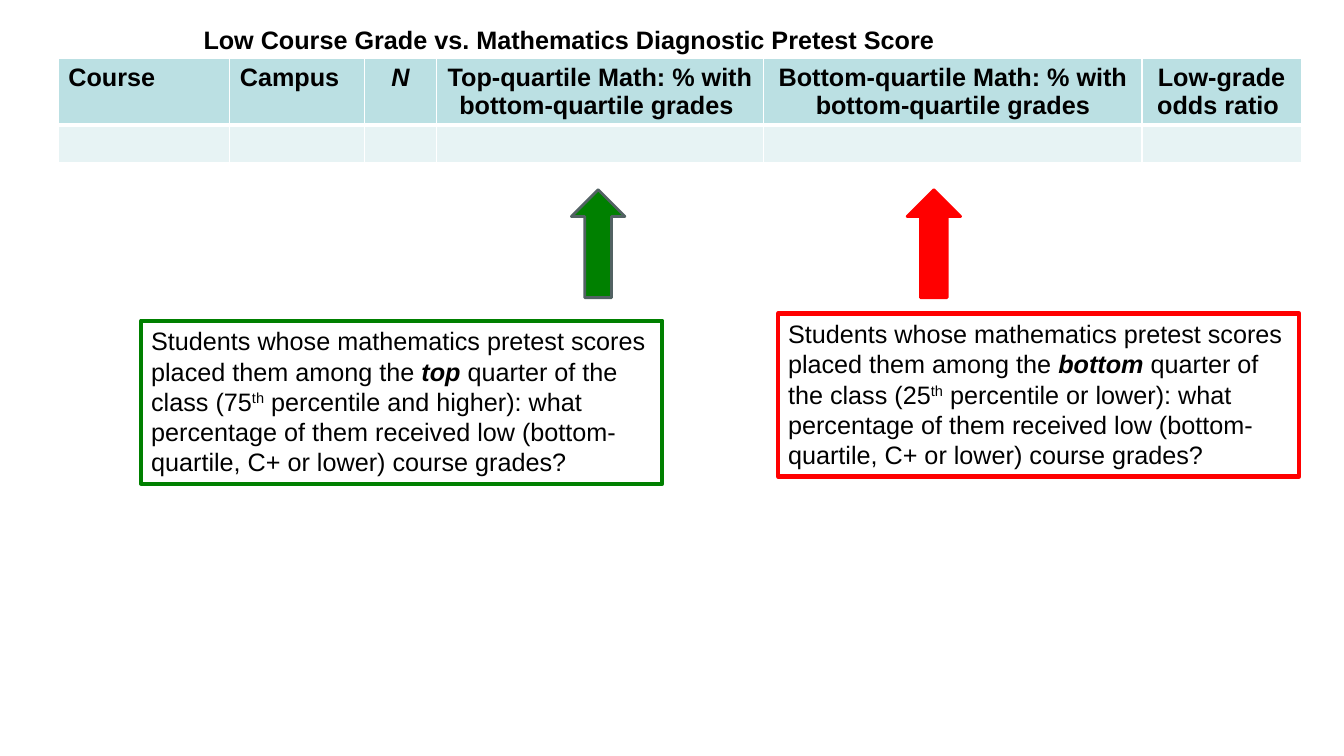
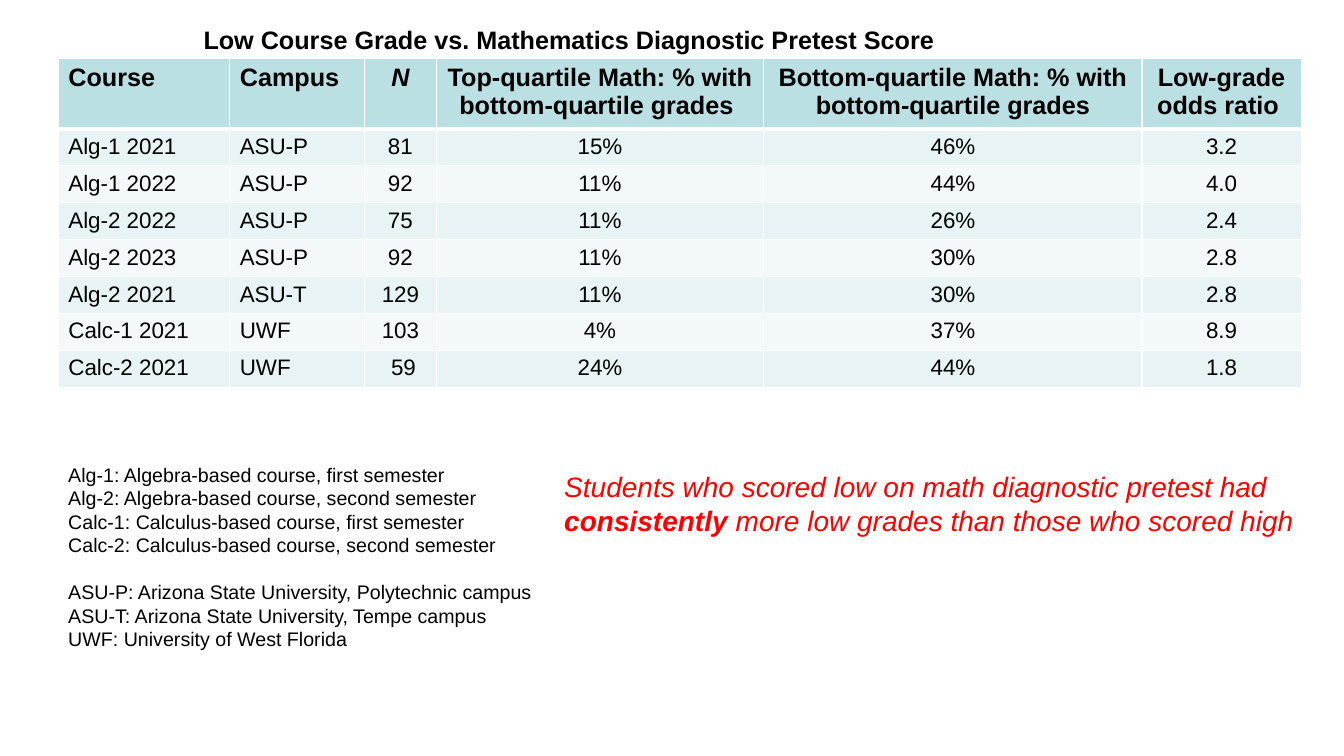
from dataclasses import dataclass

import lxml.etree
import pptx
import pptx.dml.color
import pptx.enum.shapes
import pptx.enum.text
import pptx.oxml.ns
import pptx.util

Cm, Pt = pptx.util.Cm, pptx.util.Pt
RGB = pptx.dml.color.RGBColor.from_string
qn = pptx.oxml.ns.qn
SHAPE = pptx.enum.shapes.MSO_SHAPE
ALIGN = pptx.enum.text.PP_ALIGN


@dataclass(frozen=True)
class Theme:
    font: str = "Arial"
    text: str = "000000"
    white: str = "FFFFFF"
    header: str = "BBE0E3"
    bands: tuple = ("E7F3F4", "F3F9FA")
    green: str = "008000"
    red: str = "FF0000"
    arrow_edge: str = "526263"
    body: int = 18
    cell: int = 16
    notes: int = 14
    finding: int = 20
    text_leading: float = 1.2
    cell_leading: float = 1.12


T = Theme()
TITLE = "Low Course Grade vs. Mathematics Diagnostic Pretest Score"
TITLE_BOX = (4.88, 0.48, 23.65, 1.02)
TABLE_BOX = (1.47, 1.47)
COLUMNS = (  # heading, width, centred
    ("Course", 4.32, False),
    ("Campus", 3.4, False),
    ("N", 1.8, True),
    ("Top-quartile Math: % with bottom-quartile grades ", 8.26, True),
    ("Bottom-quartile Math: % with bottom-quartile grades", 9.53, True),
    ("Low-grade odds ratio ", 4.01, True),
)
RESULTS = (
    ("Alg-1 2021", "ASU-P", "81", "15%", "46%", "3.2"),
    ("Alg-1 2022", "ASU-P", "92", "11%", "44%", "4.0"),
    ("Alg-2 2022", "ASU-P", "75", "11%", "26%", "2.4"),
    ("Alg-2 2023", "ASU-P", "92", "11%", "30%", "2.8"),
    ("Alg-2 2021", "ASU-T", "129", "11%", "30%", "2.8"),
    ("Calc-1 2021", "UWF", "103", "4%", "37%", "8.9"),
    ("Calc-2 2021", "UWF", " 59", "24%", "44%", "1.8"),
)
COURSE_KEY = (
    "Alg-1: Algebra-based course, first semester",
    "Alg-2: Algebra-based course, second semester",
    "Calc-1: Calculus-based course, first semester",
    "Calc-2: Calculus-based course, second semester",
)
CAMPUS_KEY = (
    "ASU-P: Arizona State University, Polytechnic campus",
    "ASU-T: Arizona State University, Tempe campus",
    "UWF: University of West Florida",
)


def cm(*lengths):
    return [Cm(n) for n in lengths]


def write(p, runs, size, color=T.text, leading=T.text_leading, align=ALIGN.LEFT, **base):
    """Fill a paragraph from (text, format) pairs; base applies to every run."""
    p.alignment = align
    p.line_spacing = Pt(round(size * leading, 2))
    for text, extra in runs:
        r = p.add_run()
        r.text = text
        r.font.color.rgb = RGB(color)
        fmt = {"name": T.font, "size": Pt(size), "bold": False, "italic": False}
        fmt.update(base)
        fmt.update(extra)
        raised = fmt.pop("raised", None)
        for key, value in fmt.items():
            setattr(r.font, key, value)
        if raised:
            r.font._element.set("baseline", str(raised * 1000))


def text_box(s, box):
    tf = s.shapes.add_textbox(*cm(*box)).text_frame
    tf.word_wrap = True
    return tf


def shape(s, kind, box, fill, line, width):
    sp = s.shapes.add_shape(kind, *cm(*box))
    sp.shadow.inherit = False
    if fill:
        sp.fill.solid()
        sp.fill.fore_color.rgb = RGB(fill)
    else:
        sp.fill.background()
    sp.line.color.rgb = RGB(line)
    sp.line.width = Pt(width)
    return sp


# Table
def style_cell(cell, fill, top, bottom):
    tc_pr = cell._tc.get_or_add_tcPr()
    for side, width in (("L", 1), ("R", 1), ("T", top), ("B", bottom)):
        ln = lxml.etree.SubElement(tc_pr, qn("a:ln" + side), w=str(Pt(width)))
        solid = lxml.etree.SubElement(ln, qn("a:solidFill"))
        lxml.etree.SubElement(solid, qn("a:srgbClr"), val=T.white)
    cell.fill.solid()
    cell.fill.fore_color.rgb = RGB(fill)


def grade_table(s, box, rows, header_h, row_h):
    widths = [width for _, width, _ in COLUMNS]
    height = header_h + row_h * len(rows)
    frame = s.shapes.add_table(len(rows) + 1, len(COLUMNS), *cm(*box, sum(widths), height))
    table = frame.table
    for column, width in zip(table.columns, widths):
        column.width = Cm(width)
    headings = [heading for heading, _, _ in COLUMNS]
    for i, values in enumerate([headings, *rows]):
        is_header = i == 0
        table.rows[i].height = Cm(header_h if is_header else row_h)
        fill = T.header if is_header else T.bands[(i - 1) % 2]
        size = T.body if is_header else T.cell
        for j, value in enumerate(values):
            cell = table.cell(i, j)
            style_cell(cell, fill, 3 if i == 1 else 1, 3 if is_header else 1)
            p = cell.text_frame.paragraphs[0]
            write(p, [(value, {})] if value else [], size, leading=T.cell_leading,
                  align=ALIGN.CENTER if COLUMNS[j][2] else ALIGN.LEFT,
                  bold=is_header, italic=value == "N")
            if not value:
                lxml.etree.SubElement(p._p, qn("a:endParaRPr"), sz=str(size * 100))


# Arrow above an outlined explanation
def callout(s, box, arrow_x, color, edge, group, rank, limit):
    x, y, w, h = box
    text_h = 4.11
    sp = shape(s, SHAPE.RECTANGLE, (x, y + h - text_h, w, text_h), None, color, 3)
    tf = sp.text_frame
    tf.word_wrap = True
    tf.vertical_anchor = pptx.enum.text.MSO_ANCHOR.TOP
    write(tf.paragraphs[0], (
        ("Students whose mathematics pretest scores placed them among the ", {}),
        (group, {"bold": True, "italic": True}),
        (f" quarter of the class ({rank}", {}),
        ("th", {"raised": 30}),
        (f" percentile {limit}): what percentage of them received low "
         "(bottom-quartile, C+ or lower) course grades?", {}),
    ), T.body)
    shape(s, SHAPE.UP_ARROW, (x + arrow_x, y, 1.35, 2.72), color, edge, 2)


# Abbreviations, one group after another
def key_notes(s, box, groups):
    tf = text_box(s, box)
    p = None
    for group in groups:
        for i, line in enumerate(group):
            starts_gap = p is not None and i == 0
            p = tf.paragraphs[0] if p is None else tf.add_paragraph()
            write(p, [(line, {})], T.notes)
            if starts_gap:
                p.space_before = Pt(T.notes * T.text_leading)


def finding(s, box):
    write(text_box(s, box).paragraphs[0], (
        ("Students who scored low on math diagnostic pretest had ", {}),
        ("consistently", {"bold": True}),
        (" more low grades than those who scored high", {}),
    ), T.finding, T.red, italic=True)


# Slides
def table_slide(prs, rows, header_h, row_h):
    s = prs.slides.add_slide(prs.slide_layouts[6])
    grade_table(s, TABLE_BOX, rows, header_h, row_h)
    write(text_box(s, TITLE_BOX).paragraphs[0], [(TITLE, {})], T.body, bold=True)
    return s


def main():
    prs = pptx.Presentation()
    prs.slide_width, prs.slide_height = cm(33.87, 19.05)

    s = table_slide(prs, [[""] * len(COLUMNS)], 1.68, 0.89)
    callout(s, (3.56, 4.78, 13.13, 7.41), 10.84, T.green, T.arrow_edge,
            "top", 75, "and higher")
    callout(s, (19.61, 4.78, 13.13, 7.23), 3.25, T.red, T.red,
            "bottom", 25, "or lower")

    s = table_slide(prs, RESULTS, 1.78, 0.93)
    key_notes(s, (1.47, 11.53, 15.88, 5.05), (COURSE_KEY, CAMPUS_KEY))
    finding(s, (13.97, 11.71, 19.25, 1.96))

    prs.save("out.pptx")


if __name__ == "__main__":
    main()
